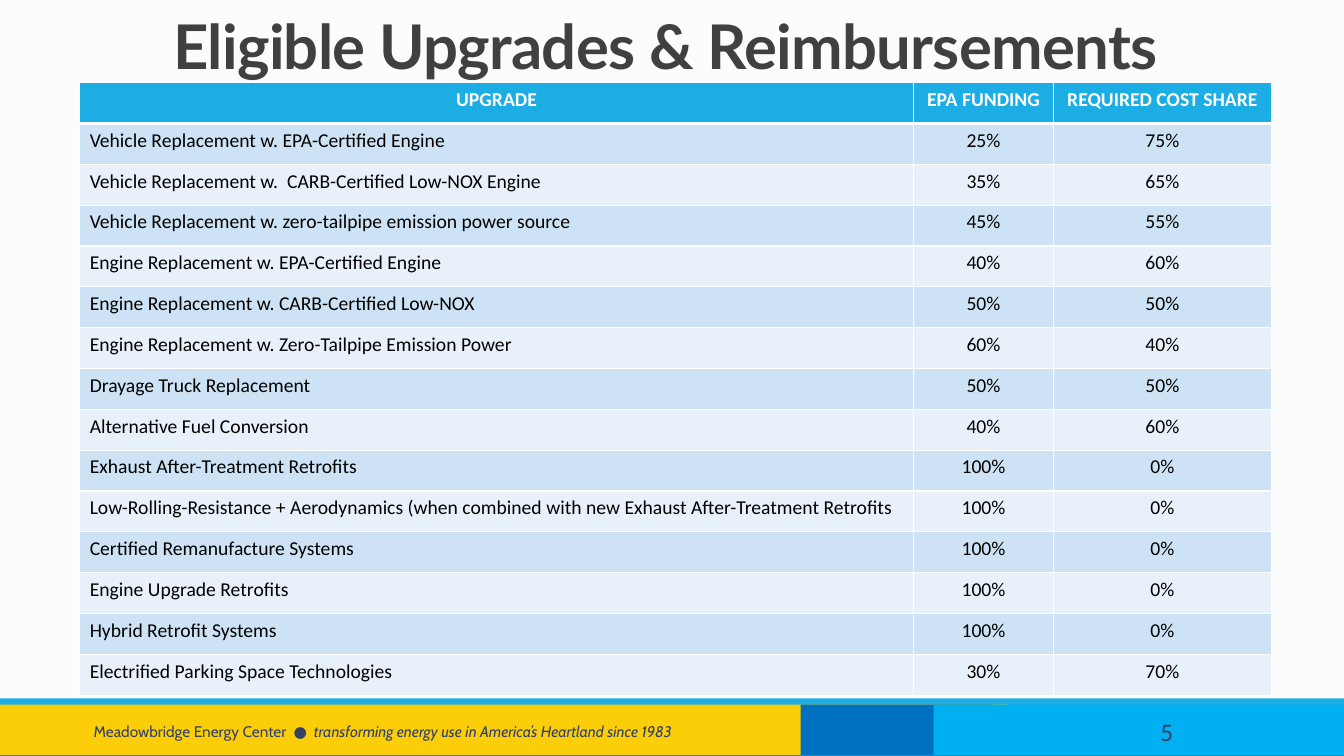
from lxml import etree
from pptx import Presentation
from pptx.dml.color import RGBColor
from pptx.enum import shapes, text
from pptx.oxml import ns
from pptx.util import Inches, Pt

COLORS = {
    "background": "FCFCFC", "base": "2683C6", "cyan": "1CADE4",
    "yellow": "FCCE09", "blue": "0070C0", "sky": "00B0F0",
    "navy": "344068", "title": "404040", "white": "FFFFFF",
    "black": "000000", "dark_band": "CDE3F5", "light_band": "E8F1FA",
}
FOOTER_BARS = [
    ("base", 0, 7, 13.33, 0.5),
    ("cyan", 0, 6.93, 13.33, 0.07),
    ("yellow", 0, 6.99, 10, 0.5),
    ("blue", 7.94, 6.99, 1.91, 0.5),
    ("sky", 9.26, 6.99, 4.07, 0.5),
]
HEADINGS = ("UPGRADE", "EPA FUNDING", "REQUIRED COST SHARE")
FUNDING = [
    ("Vehicle Replacement w. EPA-Certified Engine", 25),
    ("Vehicle Replacement w.  CARB-Certified Low-NOX Engine", 35),
    ("Vehicle Replacement w. zero-tailpipe emission power source", 45),
    ("Engine Replacement w. EPA-Certified Engine", 40),
    ("Engine Replacement w. CARB-Certified Low-NOX", 50),
    ("Engine Replacement w. Zero-Tailpipe Emission Power", 60),
    ("Drayage Truck Replacement", 50),
    ("Alternative Fuel Conversion", 40),
    ("Exhaust After-Treatment Retrofits", 100),
    ("Low-Rolling-Resistance + Aerodynamics (when combined with new "
     "Exhaust After-Treatment Retrofits", 100),
    ("Certified Remanufacture Systems", 100),
    ("Engine Upgrade Retrofits", 100),
    ("Hybrid Retrofit Systems", 100),
    ("Electrified Parking Space Technologies", 30),
]
COLUMN_WIDTHS = (8.27, 1.39, 2.16)
TABLE_HEIGHT = 6.08


def add_span(para, words, size, color, font="Calibri", bold=False, italic=False):
    span = para.add_run()
    span.text = words
    span.font.name = font
    span.font.size = Pt(size)
    span.font.bold = bold
    span.font.italic = italic
    span.font.color.rgb = RGBColor.from_string(COLORS[color])
    return span


def add_box(left, top, width, height, anchor=text.MSO_ANCHOR.MIDDLE):
    """Add a wrapping text box and return its first paragraph."""
    box = page.shapes.add_textbox(Inches(left), Inches(top), Inches(width), Inches(height))
    box.text_frame.word_wrap = True
    box.text_frame.vertical_anchor = anchor
    return box.text_frame.paragraphs[0]


deck = Presentation()
deck.slide_width = Inches(13.33)
deck.slide_height = Inches(7.5)
page = deck.slides.add_slide(deck.slide_layouts[6])
page.background.fill.solid()
page.background.fill.fore_color.rgb = RGBColor.from_string(COLORS["background"])

# Footer
for color, left, top, width, height in FOOTER_BARS:
    bar = page.shapes.add_shape(
        shapes.MSO_SHAPE.RECTANGLE,
        Inches(left), Inches(top), Inches(width), Inches(height))
    bar.shadow.inherit = False
    bar.fill.solid()
    bar.fill.fore_color.rgb = RGBColor.from_string(COLORS[color])
    bar.line.fill.background()

tagline = add_box(0.83, 7.06, 6.33, 0.4)
add_span(tagline, "Meadowbridge Energy Center  ●  ", 11, "navy", font="Cabin")
add_span(tagline, "transforming energy use in America’s Heartland since 1983",
         11, "navy", font="Cabin", italic=True)
add_span(add_box(11.41, 7.06, 1.6, 0.4), "5", 18, "navy")

# Title
title = add_box(0.62, -0.35, 12.1, 1.21, anchor=text.MSO_ANCHOR.BOTTOM)
title.alignment = text.PP_ALIGN.CENTER
title.line_spacing = 0.85
heading = add_span(title, "Eligible Upgrades & Reimbursements ", 44, "title",
                   font="Lato", bold=True)
heading._r.get_or_add_rPr().set("spc", "-50")

# Table
rows = [HEADINGS] + [(name, f"{share}%", f"{100 - share}%") for name, share in FUNDING]
table = page.shapes.add_table(
    len(rows), len(HEADINGS), Inches(0.79), Inches(0.82),
    Inches(sum(COLUMN_WIDTHS)), Inches(TABLE_HEIGHT)).table
for column, width in zip(table.columns, COLUMN_WIDTHS):
    column.width = Inches(width)

for row_index, row in enumerate(rows):
    table.rows[row_index].height = Inches(TABLE_HEIGHT / len(rows))
    is_header = row_index == 0
    band = "cyan" if is_header else ("light_band", "dark_band")[row_index % 2]
    for column_index, words in enumerate(row):
        cell = table.cell(row_index, column_index)
        para = cell.text_frame.paragraphs[0]
        if is_header or column_index > 0:
            para.alignment = text.PP_ALIGN.CENTER
        add_span(para, words, 14, "white" if is_header else "black", bold=is_header)

        # Borders must come before the fill in the cell properties
        properties = cell._tc.get_or_add_tcPr()
        for side in ("lnL", "lnR", "lnT", "lnB"):
            thick = (is_header and side == "lnB") or (row_index == 1 and side == "lnT")
            border = etree.SubElement(properties, ns.qn(f"a:{side}"),
                                      w=str(Pt(3 if thick else 1)))
            paint = etree.SubElement(border, ns.qn("a:solidFill"))
            etree.SubElement(paint, ns.qn("a:srgbClr"), val=COLORS["white"])
        cell.fill.solid()
        cell.fill.fore_color.rgb = RGBColor.from_string(COLORS[band])

deck.save("out.pptx")
